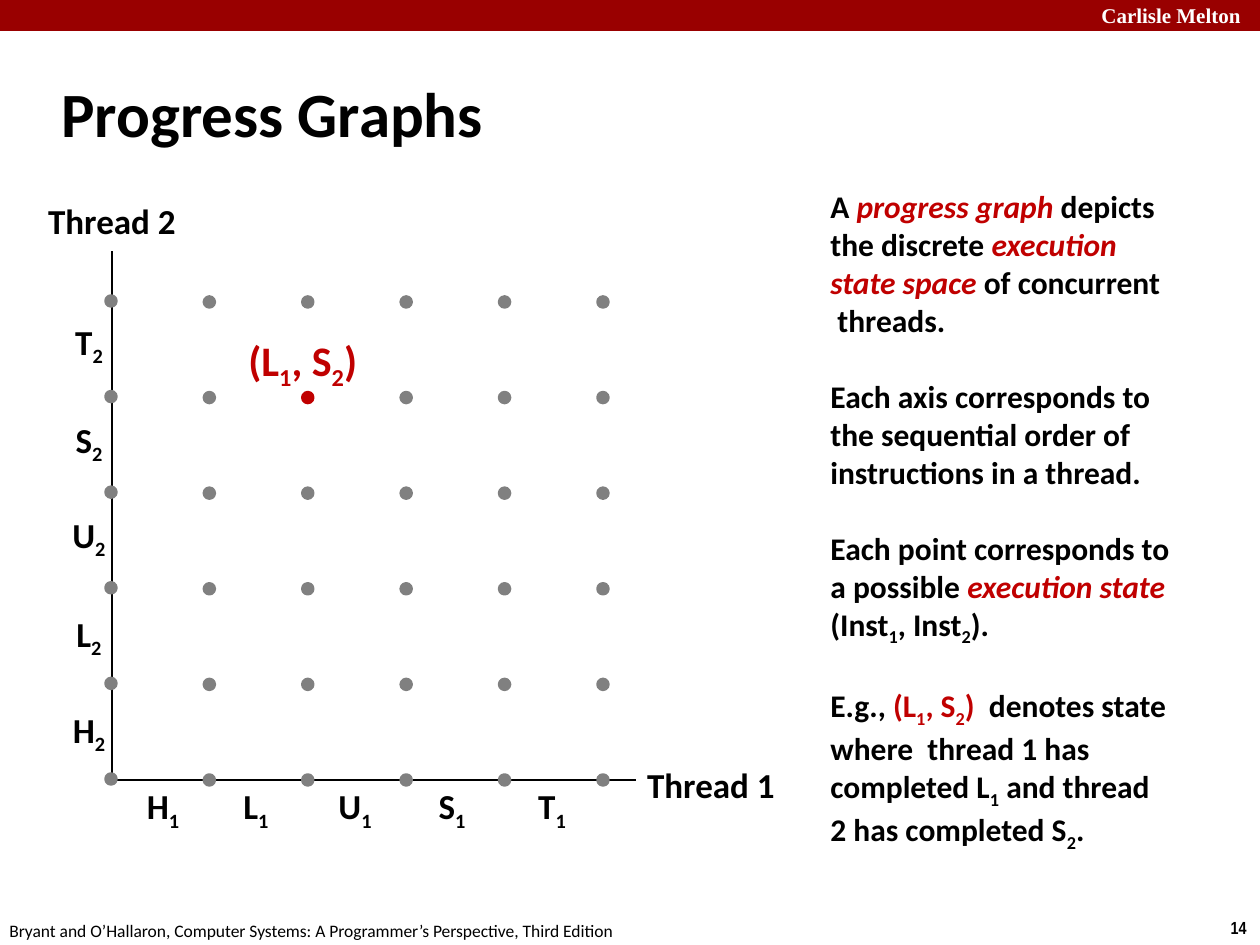
from pptx import Presentation
from pptx.dml.color import RGBColor
from pptx.enum.shapes import MSO_CONNECTOR as Connector, MSO_SHAPE as Shape
from pptx.enum.text import MSO_ANCHOR as Anchor, PP_ALIGN as Align
from pptx.oxml.ns import qn
from pptx.util import Emu, Pt
from lxml.etree import SubElement

BLACK = RGBColor(0, 0, 0)
WHITE = RGBColor(255, 255, 255)
GREY = RGBColor(0x80, 0x80, 0x80)
RED = RGBColor(0xC0, 0, 0)
BANNER = RGBColor(0x99, 0, 0)

PLAIN, RED_TEXT, TERM = (BLACK, False), (RED, False), (RED, True)

EXPLANATION = [
    [
        [("A ", PLAIN), ("progress graph ", TERM), ("depicts", PLAIN)],
        [("the discrete ", PLAIN), ("execution", TERM)],
        [("state space", TERM), (" of concurrent", PLAIN)],
        [(" threads.", PLAIN)],
    ],
    [
        [("Each axis corresponds to", PLAIN)],
        [("the sequential order of", PLAIN)],
        [("instructions in a thread.", PLAIN)],
    ],
    [
        [("Each point corresponds to", PLAIN)],
        [("a possible ", PLAIN), ("execution state", TERM)],
        [("(Inst_1, Inst_2).", PLAIN)],
    ],
    [
        [("E.g., ", PLAIN), ("(L_1, S_2)  ", RED_TEXT), ("denotes state", PLAIN)],
        [("where  thread 1 has", PLAIN)],
        [("completed L_1 and thread", PLAIN)],
        [("2 has completed S_2.", PLAIN)],
    ],
]

# letter, width, centre on the horizontal axis, centre on the vertical axis
INSTRUCTIONS = [
    ("H", 59, 163, 732),
    ("L", 53, 256, 636),
    ("U", 60, 355, 537),
    ("S", 54, 452, 442),
    ("T", 55, 552, 344),
]
LABEL_HEIGHT = 55
HORIZONTAL_LABEL_TOP, VERTICAL_LABEL_CENTRE = 781, 89

ORIGIN_X, ORIGIN_Y = 112, 780
AXIS_END_X, AXIS_END_Y = 636, 251
GRID_WIDTH, GRID_HEIGHT, STEPS = 492, 478, 5
DOT = 10
REACHED_STATE = (2, 4)


def px(value):
    return Emu(round(value * 914400 / 126))


def add_spans(para, text, color, italic):
    first, *rest = text.split("_")
    pieces = [(first, False)]
    for part in rest:
        pieces += [(part[0], True), (part[1:], False)]
    for piece, lowered in pieces:
        if piece:
            span = para.add_run()
            span.text = piece
            span.font.color.rgb = color
            span.font.italic = italic
            if lowered:
                span.font._element.set("baseline", "-25000")


def add_text(page, area, blocks, size, bold=True, font="Calibri",
             align=Align.LEFT, anchor=Anchor.MIDDLE):
    box = page.shapes.add_textbox(*map(px, area))
    frame = box.text_frame
    frame.word_wrap = align != Align.CENTER
    frame.vertical_anchor = anchor
    para = frame.paragraphs[0]
    for block_index, block in enumerate(blocks):
        for line_index, line in enumerate(block):
            if block_index or line_index:
                para = frame.add_paragraph()
            if block_index and not line_index:
                para.space_before = Pt(22)
            para.alignment = align
            para.font.name, para.font.size, para.font.bold = font, Pt(size), bold
            for text, (color, italic) in line:
                add_spans(para, text, color, italic)


def add_line(page, area, text, size, style=PLAIN, **options):
    add_text(page, area, [[[(text, style)]]], size, **options)


def paint(shape, color):
    shape.shadow.inherit = False
    shape.fill.solid()
    shape.fill.fore_color.rgb = color


def add_axis(page, end_x, end_y):
    axis = page.shapes.add_connector(
        Connector.STRAIGHT, px(ORIGIN_X), px(ORIGIN_Y), px(end_x), px(end_y))
    axis.line.color.rgb = BLACK
    axis.line.width = Pt(1)
    SubElement(axis._element.spPr, qn("a:effectLst"))


def add_states(page):
    for column in range(STEPS + 1):
        group = page.shapes.add_group_shape()
        for row in range(STEPS + 1):
            left = ORIGIN_X - 1 + GRID_WIDTH * column / STEPS - DOT / 2
            top = ORIGIN_Y - GRID_HEIGHT * row / STEPS - DOT / 2
            if column == 0:
                top -= 1
            color = RED if (column, row) == REACHED_STATE else GREY
            dot = group.shapes.add_shape(Shape.OVAL, px(left), px(top), px(DOT), px(DOT))
            paint(dot, color)
            dot.line.color.rgb = color
            dot.line.width = Pt(2)


def main():
    deck = Presentation()
    deck.slide_width, deck.slide_height = px(1260), px(945)
    page = deck.slides.add_slide(deck.slide_layouts[6])

    banner = page.shapes.add_shape(Shape.RECTANGLE, 0, 0, px(1260), px(31))
    paint(banner, BANNER)
    banner.line.fill.background()
    add_line(page, (1089, -4, 180, 38), "Carlisle Melton", 12, (WHITE, False),
             font="Times New Roman", anchor=Anchor.TOP)
    add_line(page, (1217, 911, 43, 34), "14", 10, font="Arial Narrow",
             align=Align.CENTER, anchor=Anchor.TOP)
    add_line(page, (-3, 914, 640, 34),
             "Bryant and O’Hallaron, Computer Systems: "
             "A Programmer’s Perspective, Third Edition",
             10, bold=False, anchor=Anchor.TOP)
    add_line(page, (49, 60, 1046, 105), "Progress Graphs", 36)
    add_text(page, (818, 189, 375, 662), EXPLANATION, 18)

    add_axis(page, AXIS_END_X, ORIGIN_Y)
    add_axis(page, ORIGIN_X, AXIS_END_Y)
    for letter, width, centre_x, centre_y in INSTRUCTIONS:
        spots = [
            (centre_x, HORIZONTAL_LABEL_TOP),
            (VERTICAL_LABEL_CENTRE, centre_y - LABEL_HEIGHT / 2),
        ]
        for thread, (centre, top) in enumerate(spots, 1):
            add_line(page, (centre - width / 2, top, width, LABEL_HEIGHT),
                     f"{letter}_{thread}", 20, align=Align.CENTER)
    for name, left, top in [("Thread 1", 634, 757), ("Thread 2", 35, 193)]:
        add_line(page, (left, top, 154, LABEL_HEIGHT), name, 20, align=Align.CENTER)

    add_states(page)
    add_line(page, (236, 328, 149, 63), "(L_1, S_2)", 24, RED_TEXT, anchor=Anchor.TOP)
    deck.save("out.pptx")


if __name__ == "__main__":
    main()
